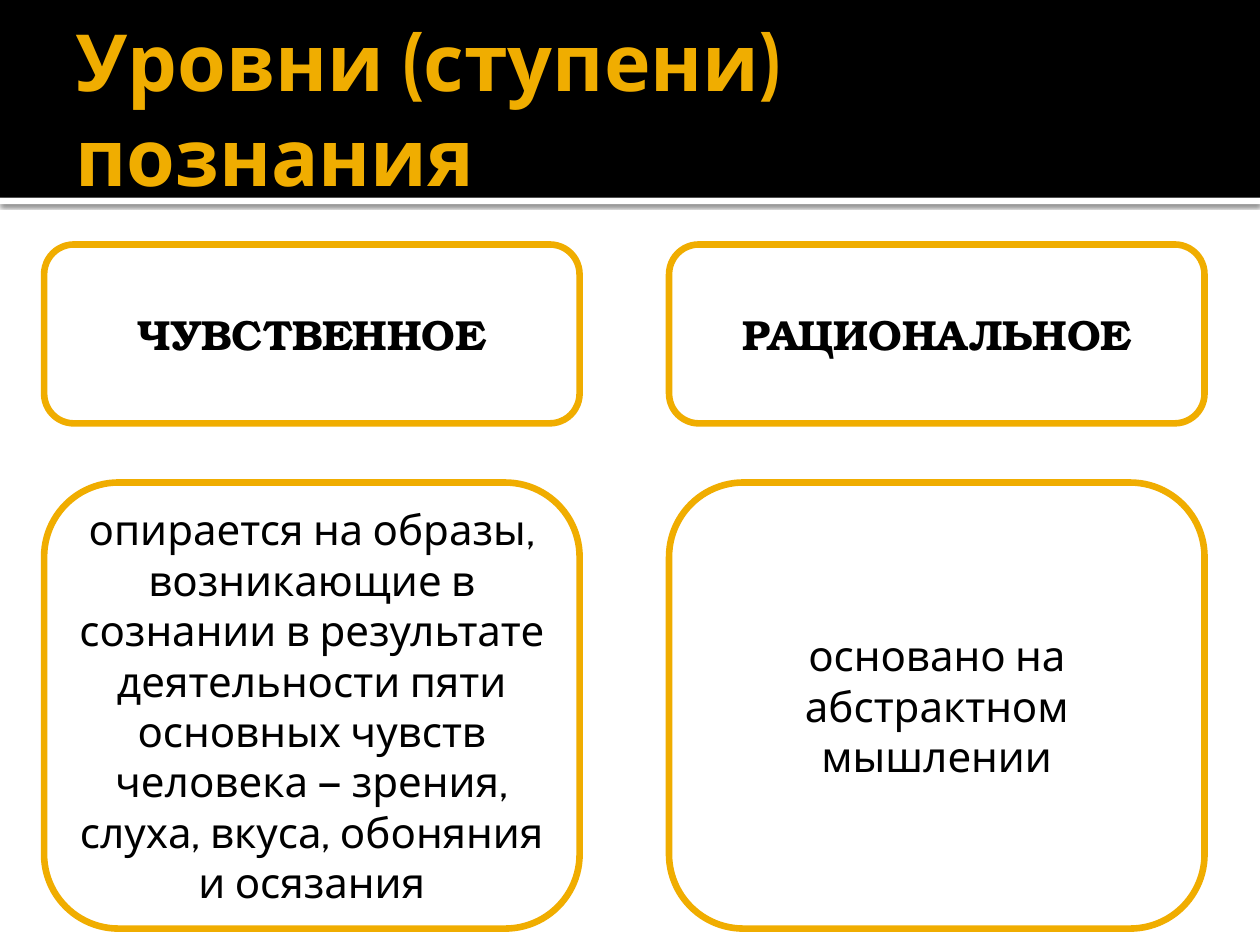
from dataclasses import dataclass

from lxml.etree import SubElement
from pptx import Presentation
from pptx.dml.color import RGBColor
from pptx.enum.shapes import MSO_SHAPE
from pptx.enum.text import MSO_ANCHOR, PP_ALIGN
from pptx.oxml.ns import qn
from pptx.util import Inches, Pt

COLOURS = {"black": "000000", "white": "FFFFFF", "amber": "F0AD00"}
BODY_FONT = "Cabin"
HEADING_FONT = "TeX Gyre Bonum"

COLUMN_LEFT = 0.35
COLUMN_STEP = 4.96
CARD_WIDTH = 4.25
HEADING_TOP, HEADING_HEIGHT = 1.94, 1.42
DETAIL_TOP, DETAIL_HEIGHT = 3.83, 3.54
BAND_HEIGHT = 1.57


@dataclass
class Level:
    name: str
    description: str


LEVELS = [
    Level("ЧУВСТВЕННОЕ",
          "опирается на образы, возникающие в сознании в результате "
          "деятельности пяти основных чувств человека — зрения, слуха, "
          "вкуса, обоняния и осязания"),
    Level("РАЦИОНАЛЬНОЕ", "основано на абстрактном мышлении"),
]


def colour(name: str) -> RGBColor:
    return RGBColor.from_string(COLOURS[name])


def write_text(shape, text: str, *, size: float, font: str = BODY_FONT,
               ink: str = "black", bold: bool = False,
               align: PP_ALIGN = PP_ALIGN.CENTER) -> None:
    frame = shape.text_frame
    frame.word_wrap = True
    frame.vertical_anchor = MSO_ANCHOR.MIDDLE
    para = frame.paragraphs[0]
    para.alignment = align
    span = para.add_run()
    span.text = text
    span.font.size = Pt(size)
    span.font.name = font
    span.font.bold = bold
    span.font.color.rgb = colour(ink)


def add_box(page, kind: MSO_SHAPE, left: float, top: float, width: float,
            height: float, *, fill: str, line: str | None = None):
    box = page.shapes.add_shape(kind, Inches(left), Inches(top),
                                Inches(width), Inches(height))
    box.shadow.inherit = False
    box.fill.solid()
    box.fill.fore_color.rgb = colour(fill)
    if line:
        box.line.color.rgb = colour(line)
        box.line.width = Pt(3.78)
    else:
        box.line.fill.background()
    return box


def add_card(page, left: float, top: float, height: float, text: str,
             **text_format) -> None:
    card = add_box(page, MSO_SHAPE.ROUNDED_RECTANGLE, left, top, CARD_WIDTH,
                   height, fill="white", line="amber")
    write_text(card, text, size=24, **text_format)


def cast_shadow(shape) -> None:
    """Give the shape a soft shadow straight below it."""
    effects = shape._element.spPr.find(qn("a:effectLst"))
    shadow = SubElement(effects, qn("a:outerShdw"), blurRad=str(Pt(2.5)),
                        dist=str(Pt(0.8)), dir="5400000", rotWithShape="0")
    tint = SubElement(shadow, qn("a:srgbClr"), val=COLOURS["black"])
    SubElement(tint, qn("a:alpha"), val="60000")


def add_title(page, text: str) -> None:
    rule = add_box(page, MSO_SHAPE.RECTANGLE, 0, BAND_HEIGHT, 10, 0.05,
                   fill="white")
    cast_shadow(rule)
    add_box(page, MSO_SHAPE.RECTANGLE, 0, 0, 10, BAND_HEIGHT, fill="black")
    title = page.shapes.add_textbox(Inches(0.5), Inches(0.17), Inches(9),
                                    Inches(1.37))
    title.text_frame.margin_right = Inches(0.05)
    write_text(title, text, size=45, ink="amber", bold=True,
               align=PP_ALIGN.LEFT)


def main() -> None:
    deck = Presentation()
    deck.slide_width, deck.slide_height = Inches(10), Inches(7.5)
    page = deck.slides.add_slide(deck.slide_layouts[6])

    add_title(page, "Уровни (ступени) познания")
    for column, level in enumerate(LEVELS):
        left = COLUMN_LEFT + column * COLUMN_STEP
        add_card(page, left, HEADING_TOP, HEADING_HEIGHT, level.name,
                 font=HEADING_FONT, bold=True)
        add_card(page, left, DETAIL_TOP, DETAIL_HEIGHT, level.description)

    deck.save("out.pptx")


if __name__ == "__main__":
    main()
